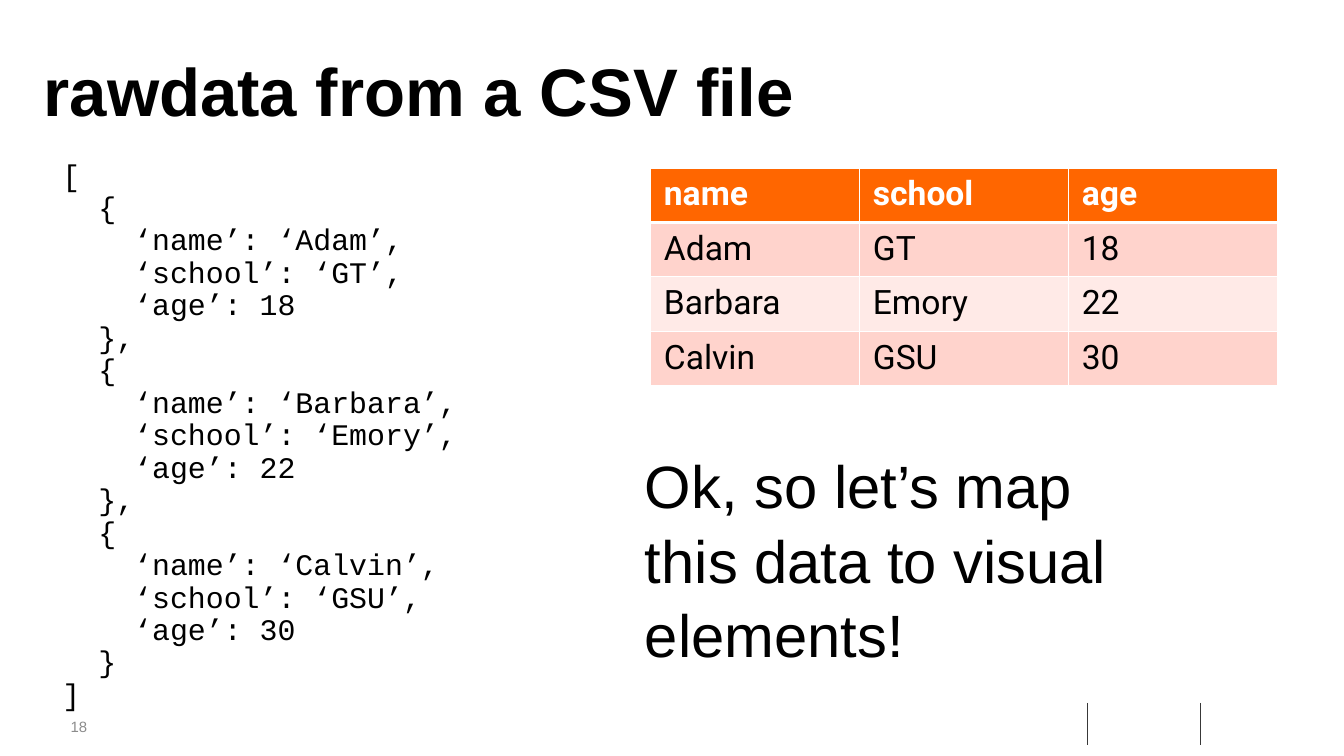
"""Build the slide that shows CSV rows as a list of dicts and as a table."""
from dataclasses import astuple, dataclass, fields

from lxml.etree import SubElement
from pptx import Presentation
from pptx.dml.color import RGBColor as RGB
from pptx.enum.shapes import MSO_CONNECTOR as Connector
from pptx.enum.text import MSO_ANCHOR as Anchor
from pptx.oxml import parse_xml
from pptx.oxml.ns import nsdecls, qn
from pptx.slide import Slide
from pptx.table import _Cell as Cell
from pptx.text.text import _Paragraph as Paragraph
from pptx.util import Pt

PX = 9144
COLORS = {
    "black": "000000", "white": "FFFFFF", "number": "8C8C8C", "rule": "383838",
    "header": "FF6600", "odd": "FFD3CC", "even": "FFEAE7",
}


@dataclass(frozen=True)
class Person:
    name: str
    school: str
    age: str


@dataclass(frozen=True)
class Text:
    lines: list[str]
    box: tuple[int, int, int, int]
    size: int
    insets: tuple[int, int, int, int] = (10, 5, 10, 5)
    font: str = "Arial"
    color: str = "black"
    bold: bool = False
    anchor: Anchor = Anchor.TOP
    spacing: float = 1.0
    before: float = 0


PEOPLE = [
    Person("Adam", "GT", "18"),
    Person("Barbara", "Emory", "22"),
    Person("Calvin", "GSU", "30"),
]


def px(*values: int) -> list[int]:
    return [v * PX for v in values]


def rgb(name: str) -> RGB:
    return RGB.from_string(COLORS[name])


def style(p: Paragraph, font: str, size: int, color: str, bold: bool) -> None:
    for r in p.runs:
        r.font.name, r.font.size, r.font.bold = font, Pt(size), bold
        r.font.color.rgb = rgb(color)


def code_lines(people: list[Person]) -> list[str]:
    lines = ["["]
    for i, person in enumerate(people, 1):
        lines += [
            "  {",
            f"    ‘name’: ‘{person.name}’,",
            f"    ‘school’: ‘{person.school}’,",
            f"    ‘age’: {person.age}",
            "  }," if i < len(people) else "  }",
        ]
    return lines + ["]"]


def add_text(slide: Slide, text: Text) -> None:
    tf = slide.shapes.add_textbox(*px(*text.box)).text_frame
    tf.word_wrap, tf.vertical_anchor = True, text.anchor
    tf.margin_left, tf.margin_top, tf.margin_right, tf.margin_bottom = px(*text.insets)
    for i, line in enumerate(text.lines):
        p = tf.add_paragraph() if i else tf.paragraphs[0]
        p.text = line
        p.line_spacing = text.spacing
        p.space_before = Pt(text.before if i else 0)
        style(p, text.font, text.size, text.color, text.bold)


def add_rule(slide: Slide, x: int, top: int, bottom: int) -> None:
    sp = slide.shapes.add_connector(Connector.STRAIGHT, *px(x, top, x, bottom))
    sp.line.width, sp.line.color.rgb = Pt(1), rgb("rule")
    SubElement(sp._element.spPr, qn("a:effectLst"))


def add_borders(cell: Cell, top: int, bottom: int) -> None:
    tc_pr = cell._tc.get_or_add_tcPr()
    for i, (side, width) in enumerate({"L": 1, "R": 1, "T": top, "B": bottom}.items()):
        tc_pr.insert(i, parse_xml(
            f'<a:ln{side} {nsdecls("a")} w="{Pt(width)}"><a:solidFill>'
            f'<a:srgbClr val="{COLORS["white"]}"/></a:solidFill></a:ln{side}>'
        ))


def add_people_table(slide: Slide, people: list[Person], x: int, y: int, col: int, row: int) -> None:
    rows = [tuple(f.name for f in fields(Person)), *map(astuple, people)]
    count = len(rows[0])
    frame = slide.shapes.add_table(len(rows), count, *px(x, y, col * count, row * len(rows)))
    for i, values in enumerate(rows):
        frame.table.rows[i].height = row * PX
        fill = "header" if i == 0 else "odd" if i % 2 else "even"
        for j, value in enumerate(values):
            cell = frame.table.cell(i, j)
            cell.margin_left, cell.margin_top, cell.margin_right, cell.margin_bottom = px(20, 10, 20, 10)
            cell.fill.solid()
            cell.fill.fore_color.rgb = rgb(fill)
            cell.text_frame.text = value
            style(cell.text_frame.paragraphs[0], "Roboto", 36, "black" if i else "white", i == 0)
            add_borders(cell, top=3 if i == 1 else 1, bottom=1 if i else 3)


def main() -> None:
    prs = Presentation()
    prs.slide_width, prs.slide_height = px(2000, 1125)
    slide = prs.slides.add_slide(prs.slide_layouts[6])
    for x in (1618, 1786):
        add_rule(slide, x, 1046, 1109)
    add_text(slide, Text(["18"], (105, 1068, 59, 27), 16, (0, 0, 0, 0), color="number", anchor=Anchor.MIDDLE))
    add_text(slide, Text(["rawdata from a CSV file"], (55, 60, 1790, 217), 72, (10, 14, 10, 5), bold=True))
    add_people_table(slide, PEOPLE, 968, 250, 311, 81)
    add_text(slide, Text(
        ["Ok, so let’s map this data to visual elements!"], (950, 653, 794, 333), 64, (10, 11, 10, 5), spacing=1.04,
    ))
    add_text(slide, Text(
        code_lines(PEOPLE), (73, 226, 878, 1008), 32, (20, 21, 20, 10), "Courier New", spacing=0.7, before=7.9,
    ))
    prs.save("out.pptx")


if __name__ == "__main__":
    main()
